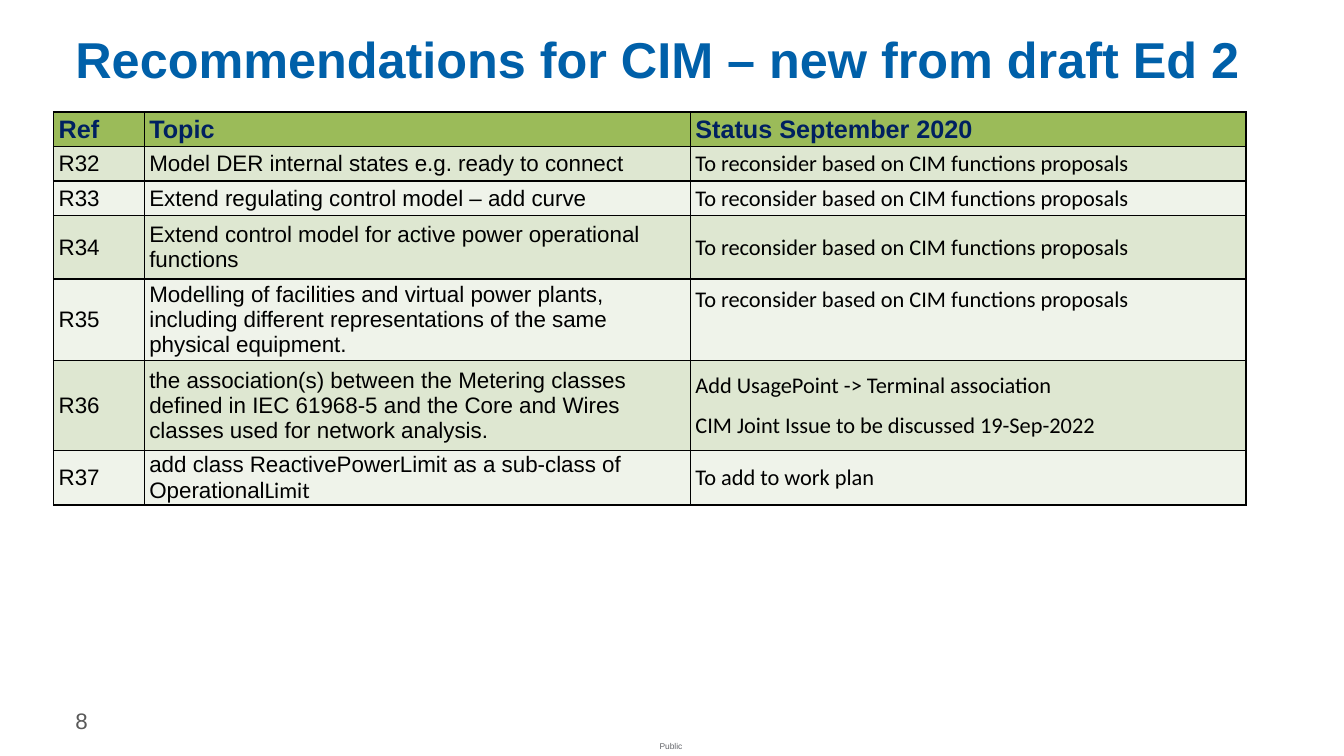
from lxml.etree import SubElement
from pptx import Presentation
from pptx.dml.color import RGBColor
from pptx.enum.text import MSO_ANCHOR, PP_ALIGN
from pptx.oxml.ns import qn
from pptx.util import Cm, Pt

HEADINGS = ["Ref", "Topic", "Status September 2020"]
RECONSIDER = ["To reconsider based on CIM functions proposals"]
RECOMMENDATIONS = [
    ("R32", "Model DER internal states e.g. ready to connect", RECONSIDER),
    ("R33", "Extend regulating control model – add curve", RECONSIDER),
    ("R34", "Extend control model for active power operational functions", RECONSIDER),
    ("R35", "Modelling of facilities and virtual power plants, including different "
            "representations of the same physical equipment.", RECONSIDER),
    ("R36", "the association(s) between the Metering classes defined in IEC 61968-5 "
            "and the Core and Wires classes used for network analysis.",
     ["Add UsagePoint -> Terminal association",
      "CIM Joint Issue to be discussed 19-Sep-2022"]),
    ("R37", "add class ReactivePowerLimit as a sub-class of Operational",
     ["To add to work plan"]),
]
TOPIC_ENDINGS = {"R37": "Limit"}
COLUMN_SHARES = [0.076, 0.458, 0.466]
ROW_HEIGHTS = [0.87, 0.87, 0.87, 1.6, 1.9, 2.27, 1.35]
HEADER_FILL, BAND_FILLS = "9BBB59", ["DEE7D1", "EFF3EA"]

TITLE_FONT = {"name": "Arial", "size": Pt(36), "bold": True}
HEADING_FONT = {"name": "Arial", "size": Pt(18), "bold": True}
TOPIC_FONT = {"name": "Arial", "size": Pt(16), "bold": False}
STATUS_FONT = {**TOPIC_FONT, "name": "Calibri"}
LABEL_FONT = {"name": "Arial", "size": Pt(6)}
NO_MARGINS = dict.fromkeys(
    ["margin_left", "margin_top", "margin_right", "margin_bottom"], 0)
CELL_FORMAT = {"margin_left": Cm(0.13), "margin_top": Cm(0.02), "margin_right": Cm(0.02),
               "margin_bottom": 0, "vertical_anchor": MSO_ANCHOR.MIDDLE}
TOP_FORMAT = {"margin_top": Cm(0.19), "vertical_anchor": MSO_ANCHOR.TOP}


def rgb(hex_colour):
    """Turn a hex string into a colour."""
    return RGBColor.from_string(hex_colour)


def apply(target, values):
    """Set every attribute named in a dict of format values."""
    for name, value in values.items():
        setattr(target, name, value)


def add_run(paragraph, text, font, colour):
    """Append formatted text to a paragraph."""
    run = paragraph.add_run()
    run.text = text
    apply(run.font, font)
    run.font.color.rgb = rgb(colour)


def add_line(slide, box, text, font, colour, align=PP_ALIGN.LEFT, margins=None):
    """Place one line of text, vertically centred in its box."""
    frame = slide.shapes.add_textbox(*map(Cm, box)).text_frame
    apply(frame, {"word_wrap": True, "vertical_anchor": MSO_ANCHOR.MIDDLE, **(margins or {})})
    frame.paragraphs[0].alignment = align
    add_run(frame.paragraphs[0], text, font, colour)


def style_cell(cell, fill):
    """Give a cell its margins, black borders and fill."""
    apply(cell, CELL_FORMAT)
    properties = cell._tc.get_or_add_tcPr()
    for side in ("a:lnL", "a:lnR", "a:lnT", "a:lnB"):
        border = SubElement(properties, qn(side), w=str(Pt(1)))
        SubElement(SubElement(border, qn("a:solidFill")), qn("a:srgbClr"), val="000000")
    cell.fill.solid()
    cell.fill.fore_color.rgb = rgb(fill)


def fill_cell(cell, lines, font, colour, fill):
    """Style a cell and write its paragraphs."""
    style_cell(cell, fill)
    frame = cell.text_frame
    for index, line in enumerate(lines):
        paragraph = frame.add_paragraph() if index else frame.paragraphs[0]
        apply(paragraph, {"space_before": Pt(3 if index else 0), "space_after": Pt(6)})
        add_run(paragraph, line, font, colour)


def add_recommendations(slide, box):
    """Build the recommendations table in its box."""
    left, top, width = box
    table = slide.shapes.add_table(len(ROW_HEIGHTS), len(HEADINGS), Cm(left), Cm(top),
                                   Cm(width), Cm(sum(ROW_HEIGHTS))).table
    for column, share in zip(table.columns, COLUMN_SHARES):
        column.width = Cm(width * share)
    for row, height in zip(table.rows, ROW_HEIGHTS):
        row.height = Cm(height)
    for column, heading in enumerate(HEADINGS):
        fill_cell(table.cell(0, column), [heading], HEADING_FONT, "002060", HEADER_FILL)
    for row, (ref, topic, status) in enumerate(RECOMMENDATIONS, 1):
        fill = BAND_FILLS[(row - 1) % 2]
        ref_cell, topic_cell, status_cell = table.rows[row].cells
        fill_cell(ref_cell, [ref], TOPIC_FONT, "000000", fill)
        fill_cell(topic_cell, [topic], TOPIC_FONT, "000000", fill)
        fill_cell(status_cell, status, STATUS_FONT, "000000", fill)
        if ref in TOPIC_ENDINGS:
            add_run(topic_cell.text_frame.paragraphs[0], TOPIC_ENDINGS[ref],
                    STATUS_FONT, "000000")
        if ref == "R35":
            apply(status_cell, TOP_FORMAT)


def add_footer(slide, box):
    """Place the page number and the classification label in the footer box."""
    left, top, width, height = box
    add_line(slide, (left + 14.7, top + 0.89, 1.12, 0.5), "Public", LABEL_FONT, "626469",
             PP_ALIGN.CENTER, NO_MARGINS)
    add_line(slide, (left, top, 2.92, height), "8", TOPIC_FONT, "595959")


def main():
    """Build and save the slide."""
    deck = Presentation()
    apply(deck, {"slide_width": Cm(33.87), "slide_height": Cm(19.05)})
    slide = deck.slides.add_slide(deck.slide_layouts[6])
    add_line(slide, (1.65, 0.53, 30.66, 1.9),
             "Recommendations for CIM – new from draft Ed 2", TITLE_FONT, "0060A9")
    add_recommendations(slide, (1.35, 2.82, 30.05))
    add_footer(slide, (1.65, 17.65, 30.66, 1.02))
    deck.save("out.pptx")


if __name__ == "__main__":
    main()
